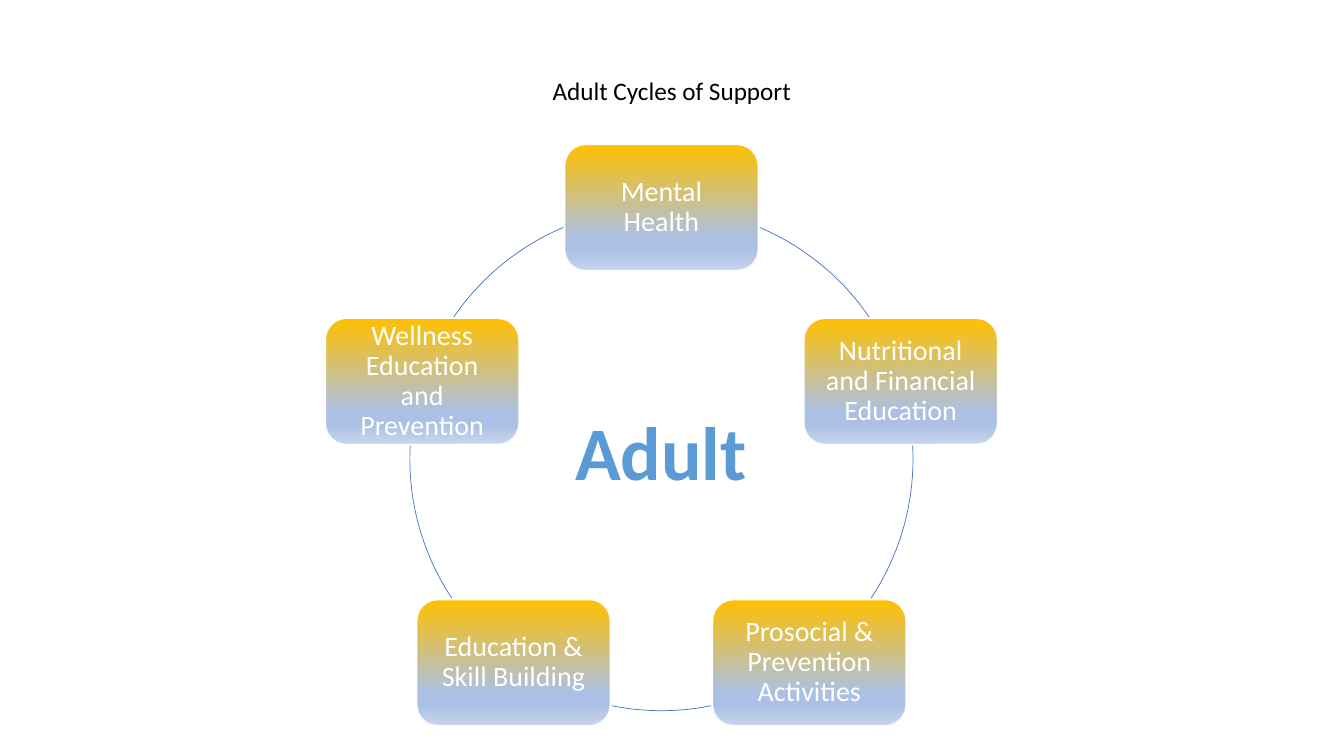
import math
from lxml import etree
from pptx import Presentation
from pptx.dml import color
from pptx.enum import shapes, text
from pptx.oxml import ns
from pptx.util import Cm, Pt

COLORS = {"gold": "FFC000", "sky": "ABC0E4", "pale": "C7D5ED", "ring": "4472C4",
          "center": "5B9BD5", "white": "FFFFFF", "black": "000000"}
GRADIENT = [(0, "gold"), (74, "sky"), (83, "sky"), (100, "pale")]
TOPICS = ["Mental Health", "Nutritional and Financial Education",
          "Prosocial & Prevention Activities", "Education & Skill Building",
          "Wellness Education and Prevention"]
ARCS = [(23, 55.6), (86.9, 123.5), (168.6, 191.4), (236.5, 273.1), (304.4, 337)]
CENTER_X, CENTER_Y, RADIUS = 16.67, 11.57, 6.34
CARD_WIDTH, CARD_HEIGHT = 4.88, 3.18


def apply(target, formats):
    for name, value in formats.items():
        setattr(target, name, value)


def write(box, words, size, shade, frame_format, para_format):
    frame = box.text_frame
    apply(frame, frame_format)
    para = frame.paragraphs[0]
    apply(para, {"alignment": text.PP_ALIGN.CENTER, **para_format})
    span = para.add_run()
    span.text = words
    apply(span.font, {"name": "Calibri", "size": Pt(size)})
    span.font.color.rgb = color.RGBColor.from_string(COLORS[shade])
    return span


deck = Presentation()
apply(deck, {"slide_width": Cm(33.87), "slide_height": Cm(19.05)})
page = deck.slides.add_slide(deck.slide_layouts[5])

title = page.shapes.title
apply(title, {"left": Cm(3.76), "top": Cm(1.78), "width": Cm(26.34), "height": Cm(1.02)})
write(title, "Adult Cycles of Support", 18, "black",
      {"word_wrap": True, "auto_size": text.MSO_AUTO_SIZE.NONE,
       "vertical_anchor": text.MSO_ANCHOR.TOP}, {})

card_frame = {"word_wrap": True, "vertical_anchor": text.MSO_ANCHOR.MIDDLE}
card_frame.update({f"margin_{side}": Cm(0.34) for side in ("left", "top", "right", "bottom")})

for index, (topic, angles) in enumerate(zip(TOPICS, ARCS)):
    turn = math.radians(index * 360 / len(TOPICS))
    card = page.shapes.add_shape(
        shapes.MSO_SHAPE.ROUNDED_RECTANGLE,
        Cm(CENTER_X + RADIUS * math.sin(turn) - CARD_WIDTH / 2),
        Cm(CENTER_Y - RADIUS * math.cos(turn) - CARD_HEIGHT / 2),
        Cm(CARD_WIDTH), Cm(CARD_HEIGHT))
    card.shadow.inherit = False
    card.fill.gradient()
    card.fill.gradient_angle = 270
    stops = card._element.spPr.find(".//" + ns.qn("a:gsLst"))
    for stop in list(stops):
        stops.remove(stop)
    for percent, shade in GRADIENT:
        stop = etree.SubElement(stops, ns.qn("a:gs"), pos=str(percent * 1000))
        etree.SubElement(stop, ns.qn("a:srgbClr"), val=COLORS[shade])
    card.line.color.rgb = color.RGBColor.from_string(COLORS["white"])
    card.line.width = Pt(1)
    write(card, topic, 20, "white", card_frame, {"line_spacing": 0.9})

    arc = page.shapes.add_shape(shapes.MSO_SHAPE.ARC, Cm(CENTER_X - RADIUS),
                                Cm(CENTER_Y - RADIUS), Cm(2 * RADIUS), Cm(2 * RADIUS))
    arc.shadow.inherit = False
    arc.fill.background()
    arc.line.color.rgb = color.RGBColor.from_string(COLORS["ring"])
    arc.line.width = Pt(0.5)
    for end, angle in enumerate(angles):
        arc.adjustments[end] = (angle - 90) % 360 * 0.6

label = page.shapes.add_textbox(Cm(14.22), Cm(10.08), Cm(4.88), Cm(2.57))
span = write(label, "Adult", 54, "center",
             {"word_wrap": False, "auto_size": text.MSO_AUTO_SIZE.SHAPE_TO_FIT_TEXT}, {})
span.font.bold = True
outline = etree.Element(ns.qn("a:ln"), w=str(Pt(0.75)))
fill = etree.SubElement(outline, ns.qn("a:solidFill"))
etree.SubElement(fill, ns.qn("a:srgbClr"), val=COLORS["white"])
span.font._element.insert(0, outline)

deck.save("out.pptx")
